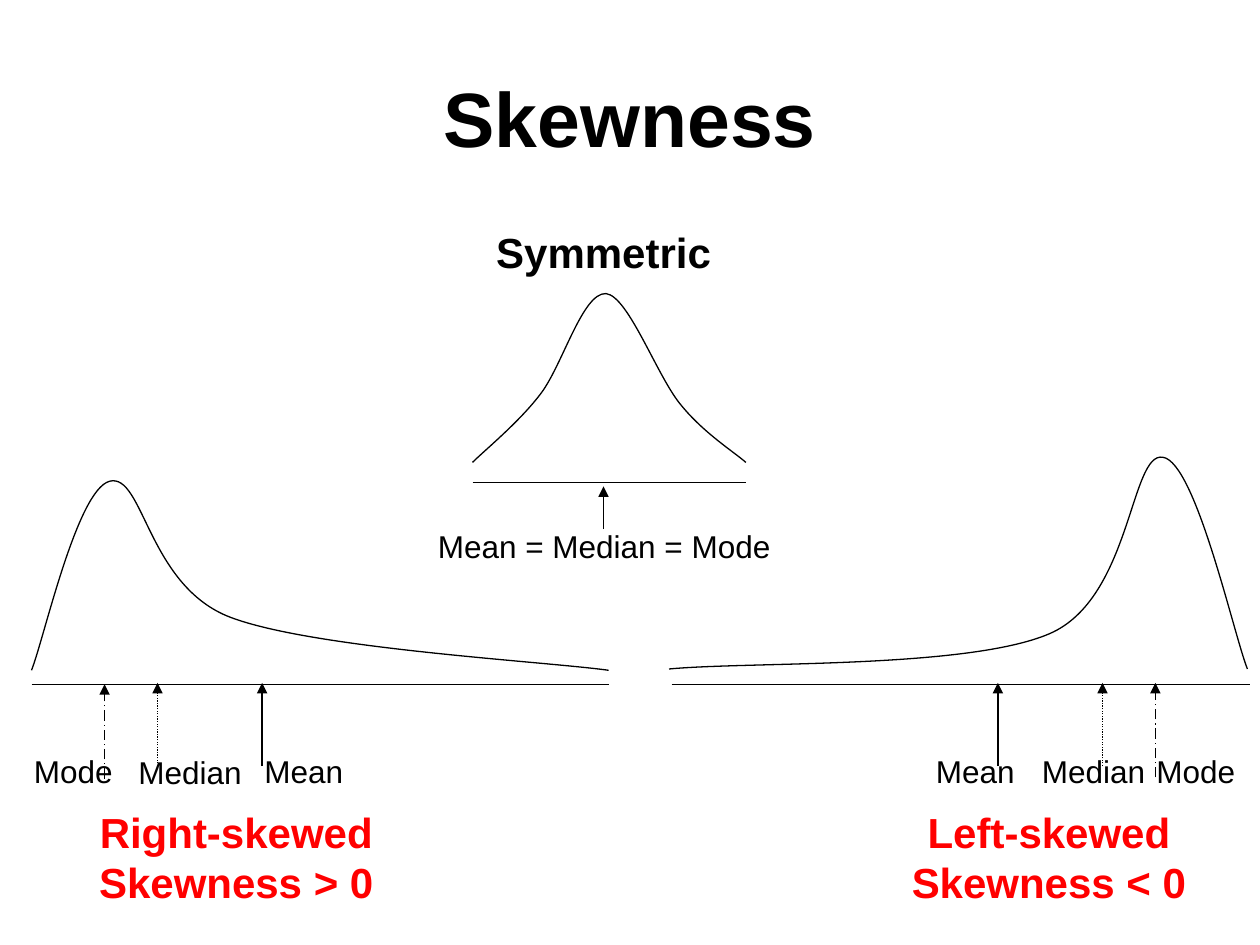
from dataclasses import dataclass

from pptx import Presentation
from pptx.dml.color import RGBColor
from pptx.enum.dml import MSO_LINE as Dash
from pptx.enum.shapes import MSO_CONNECTOR as Connector
from pptx.enum.text import MSO_ANCHOR as Anchor, MSO_AUTO_SIZE as AutoSize, PP_ALIGN as Align
from pptx.oxml.ns import qn
from pptx.util import Inches, Pt
from lxml.etree import SubElement


@dataclass(frozen=True)
class Theme:
    font: str = "Arial"
    ink: RGBColor = RGBColor(0, 0, 0)
    accent: RGBColor = RGBColor(255, 0, 0)
    title: int = 44
    heading: int = 24
    label: int = 18
    stroke: float = 0.75


class SkewSlide:
    def __init__(self, slide, theme):
        self.slide = slide
        self.theme = theme

    def text(self, box, lines, size, color=None, bold=False, align=Align.CENTER, anchor=Anchor.TOP):
        frame = self.slide.shapes.add_textbox(*map(Inches, box)).text_frame
        frame.word_wrap = True
        frame.vertical_anchor = anchor
        if anchor == Anchor.TOP:
            frame.auto_size = AutoSize.SHAPE_TO_FIT_TEXT
        for index, line in enumerate(lines):
            paragraph = frame.paragraphs[0] if index == 0 else frame.add_paragraph()
            paragraph.alignment = align
            run = paragraph.add_run()
            run.text = line
            run.font.name = self.theme.font
            run.font.size = Pt(size)
            run.font.bold = bold
            run.font.color.rgb = color or self.theme.ink

    def stroke(self, line):
        line.color.rgb = self.theme.ink
        line.width = Pt(self.theme.stroke)

    def line(self, start, end, dash=None, arrow=False):
        connector = self.slide.shapes.add_connector(Connector.STRAIGHT, *map(Inches, start + end))
        self.stroke(connector.line)
        if dash:
            connector.line.dash_style = dash
        properties = connector.element.spPr
        if arrow:
            SubElement(properties.find(qn("a:ln")), qn("a:tailEnd"), type="triangle")
        SubElement(properties, qn("a:effectLst"))

    def curve(self, *points):
        start, *controls = [(Inches(x), Inches(y)) for x, y in points]
        builder = self.slide.shapes.build_freeform(*start)
        builder.add_line_segments(controls, close=False)
        outline = builder.convert_to_shape()
        outline.shadow.inherit = False
        outline.fill.background()
        self.stroke(outline.line)
        route = next(outline.element.iter(qn("a:path")))
        for index, segment in enumerate(route.findall(qn("a:lnTo"))):
            if index % 3 == 0:
                bezier = SubElement(route, qn("a:cubicBezTo"))
            bezier.append(segment[0])
            route.remove(segment)

    def marker(self, name, arrow_x, tip_y, label_x, label_y):
        width, length, dash = MARKERS[name]
        self.line((arrow_x, tip_y + length), (arrow_x, tip_y), dash, arrow=True)
        self.text((label_x, label_y, width, 0.4), [name], self.theme.label, align=Align.LEFT)


AXIS_Y = 5.43
MARKERS = {
    "Mean": (1.33, 0.66, None),
    "Median": (1.42, 0.66, Dash.ROUND_DOT),
    "Mode": (1.08, 0.75, Dash.LONG_DASH_DOT),
}


def main():
    deck = Presentation()
    deck.slide_width, deck.slide_height = Inches(10), Inches(7.5)
    theme = Theme()
    skew = SkewSlide(deck.slides.add_slide(deck.slide_layouts[6]), theme)

    skew.text((0.5, 0.3, 9, 1.25), ["Skewness"], theme.title, bold=True, anchor=Anchor.MIDDLE)

    skew.line((4.79, 4.2), (4.79, 3.86), arrow=True)
    skew.text((3.17, 4.13, 3.25, 0.4), ["Mean = Median = Mode"], theme.label)
    skew.line((3.75, 3.83), (5.92, 3.83))
    skew.curve(
        (3.75, 3.67),
        (3.84, 3.58), (4.11, 3.36), (4.28, 3.14),
        (4.46, 2.92), (4.62, 2.32), (4.81, 2.33),
        (4.99, 2.35), (5.22, 3), (5.41, 3.22),
        (5.59, 3.44), (5.83, 3.59), (5.92, 3.67),
    )
    skew.text((3.75, 1.75, 2.08, 0.5), ["Symmetric"], theme.heading, bold=True)

    right_curve = [
        (0.25, 5.32),
        (0.35, 5.07), (0.61, 3.89), (0.87, 3.82),
        (1.14, 3.75), (1.17, 4.65), (1.83, 4.9),
        (2.49, 5.15), (4.33, 5.25), (4.83, 5.32),
    ]
    left_curve = [
        (9.9, 5.31),
        (9.79, 5.03), (9.49, 3.67), (9.23, 3.63),
        (8.97, 3.58), (8.98, 4.75), (8.33, 5.03),
        (7.68, 5.31), (5.94, 5.25), (5.31, 5.31),
    ]
    right_markers = [
        ("Median", 1.25, 5.42, 1, 5.93),
        ("Mean", 2.08, 5.42, 2, 5.92),
        ("Mode", 0.83, 5.43, 0.17, 5.92),
    ]
    left_markers = [
        ("Median", 8.75, 5.42, 8.17, 5.92),
        ("Mean", 7.92, 5.42, 7.33, 5.92),
        ("Mode", 9.17, 5.42, 9.08, 5.92),
    ]
    skewed = [
        ("Right-skewed", "Skewness > 0", 0.5, (0.25, 4.83), right_markers, right_curve),
        ("Left-skewed", "Skewness < 0", 6.95, (5.33, 9.92), left_markers, left_curve),
    ]
    for heading, sign, caption_x, (axis_start, axis_end), markers, curve in skewed:
        skew.line((axis_start, AXIS_Y), (axis_end, AXIS_Y))
        for marker in markers:
            skew.marker(*marker)
        skew.curve(*curve)
        skew.text((caption_x, 6.35, 2.75, 0.9), [heading, sign], theme.heading, theme.accent, bold=True)

    deck.save("out.pptx")


if __name__ == "__main__":
    main()
